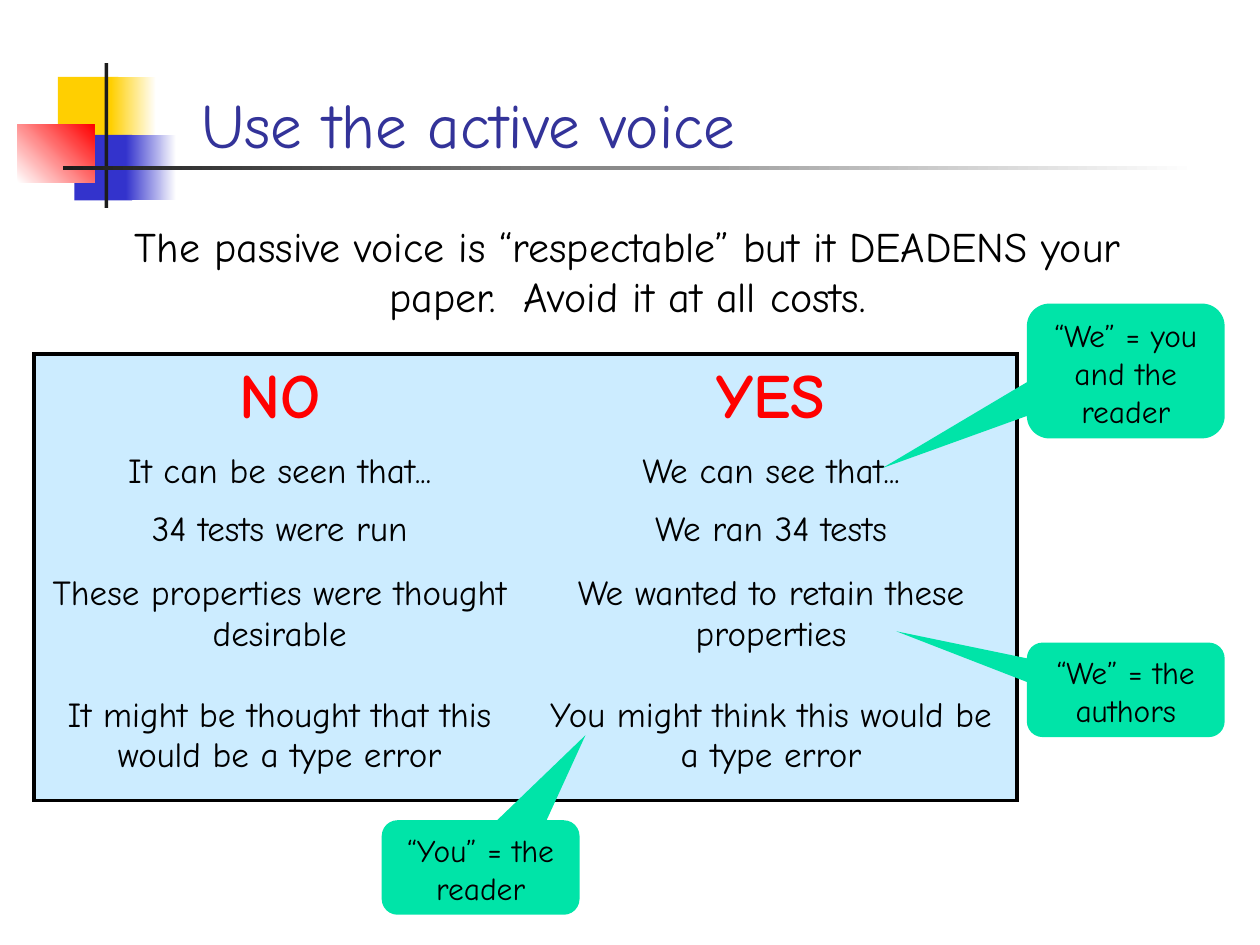
from pptx import Presentation
from pptx.dml.color import RGBColor
from pptx.enum.shapes import MSO_SHAPE
from pptx.enum.text import MSO_ANCHOR, PP_ALIGN
from pptx.oxml.ns import qn
from pptx.util import Inches, Pt
from lxml.etree import SubElement

FONT = "Comic Neue"
BLACK, RED, BLUE, YELLOW = "000000", "FF0000", "3333CC", "FFCF01"
WHITE, CHARCOAL, NAVY = "FFFFFF", "1C1C1C", "333399"
PALE_BLUE, GREEN = "CCECFF", "00E4A8"

# left, top, width, height, gradient colours or one colour, angle
DECORATIONS = [
    (0.46, 0.61, 0.48, 0.52, [YELLOW], 0),
    (0.88, 0.61, 0.36, 0.52, [YELLOW, WHITE], 0),
    (0.59, 1.07, 0.46, 0.52, [BLUE], 0),
    (1.0, 1.07, 0.4, 0.52, [BLUE, WHITE], 0),
    (0.14, 0.99, 0.61, 0.46, [WHITE, RED], 45),
    (0.83, 0.5, 0.03, 1.15, [CHARCOAL], 0),
    (0.5, 1.32, 9, 0.03, [CHARCOAL, WHITE], 0),
]

COMPARISONS = [
    ("NO", "YES", 0.63),
    ("It can be seen that...", "We can see that...", 0.48),
    ("34 tests were run", "We ran 34 tests", 0.39),
    ("These properties were thought desirable",
     "We wanted to retain these properties", 0.91),
    ("It might be thought that this would be a type error",
     "You might think this would be a type error", 1.02),
]

# left, top, height, pointer x and y, text
CALLOUTS = [
    (8.15, 2.41, 1.07, -1.23, 0.72, "“We” = you and the reader"),
    (8.15, 5.1, 0.75, -1.16, -0.62, "“We” = the authors"),
    (3.03, 6.51, 0.75, 0.53, -1.4, "“You” = the reader"),
]


def rgb(value):
    return RGBColor.from_string(value)


def write(frame, text, size, color=BLACK, bold=False,
          align=PP_ALIGN.CENTER, space_percent=0):
    frame.word_wrap = True
    paragraph = frame.paragraphs[0]
    paragraph.alignment = align
    if space_percent:
        spacing = SubElement(paragraph._p.get_or_add_pPr(), qn("a:spcBef"))
        SubElement(spacing, qn("a:spcPct"), val=str(space_percent * 1000))
    run = paragraph.add_run()
    run.text = text
    run.font.name = FONT
    run.font.size = Pt(size)
    run.font.bold = bold
    run.font.color.rgb = rgb(color)


def add_text(slide, left, top, width, height, text, size,
             anchor=MSO_ANCHOR.TOP, **style):
    box = slide.shapes.add_textbox(
        Inches(left), Inches(top), Inches(width), Inches(height))
    box.text_frame.vertical_anchor = anchor
    write(box.text_frame, text, size, **style)


def add_block(slide, preset, left, top, width, height, colors, angle=0):
    block = slide.shapes.add_shape(
        preset, Inches(left), Inches(top), Inches(width), Inches(height))
    block.shadow.inherit = False
    block.line.fill.background()
    if len(colors) == 1:
        block.fill.solid()
        block.fill.fore_color.rgb = rgb(colors[0])
    else:
        block.fill.gradient()
        block.fill.gradient_angle = angle
        for position, (stop, color) in enumerate(
                zip(block.fill.gradient_stops, colors)):
            stop.position = position
            stop.color.rgb = rgb(color)
    return block


def add_callout(slide, left, top, height, pointer_x, pointer_y, text):
    callout = add_block(slide, MSO_SHAPE.ROUNDED_RECTANGULAR_CALLOUT,
                        left, top, 1.57, height, [GREEN])
    callout.adjustments[0] = pointer_x
    callout.adjustments[1] = pointer_y
    callout.text_frame.vertical_anchor = MSO_ANCHOR.TOP
    write(callout.text_frame, text, 18, space_percent=40)


def set_borders(cell, visible_sides):
    properties = cell._tc.get_or_add_tcPr()
    for side in "LRTB":
        border = SubElement(properties, qn(f"a:ln{side}"), w=str(Pt(2.25)))
        if side in visible_sides:
            fill = SubElement(border, qn("a:solidFill"))
            SubElement(fill, qn("a:srgbClr"), val=BLACK)
        else:
            SubElement(border, qn("a:noFill"))


def add_comparison_table(slide):
    row_count = len(COMPARISONS)
    table = slide.shapes.add_table(
        row_count, 2, Inches(0.27), Inches(2.81),
        Inches(7.8), Inches(3.55)).table
    table.first_row = table.horz_banding = False
    for row, (*phrases, height) in enumerate(COMPARISONS):
        table.rows[row].height = Inches(height)
        for column, phrase in enumerate(phrases):
            cell = table.cell(row, column)
            # Only the outer edge of the table has a line
            sides = "LR"[column]
            if row == 0:
                sides += "T"
            if row == row_count - 1:
                sides += "B"
            set_borders(cell, sides)
            cell.fill.solid()
            cell.fill.fore_color.rgb = rgb(PALE_BLUE)
            cell.vertical_anchor = MSO_ANCHOR.MIDDLE
            heading = row == 0
            write(cell.text_frame, phrase, 36 if heading else 20,
                  RED if heading else BLACK, bold=heading, space_percent=20)


def main():
    presentation = Presentation()
    presentation.slide_width = Inches(10)
    presentation.slide_height = Inches(7.5)
    slide = presentation.slides.add_slide(presentation.slide_layouts[6])

    # Corner decoration and rule under the title
    for left, top, width, height, colors, angle in DECORATIONS:
        add_block(slide, MSO_SHAPE.RECTANGLE, left, top, width, height,
                  colors, angle)

    # Title
    add_text(slide, 1.5, 0.08, 8.52, 1.25, "Use the active voice", 36,
             anchor=MSO_ANCHOR.BOTTOM, color=NAVY, align=PP_ALIGN.LEFT)

    # Passive and active phrases
    add_comparison_table(slide)

    # Advice
    add_text(slide, 0.59, 1.7, 8.78, 0.9,
             "The passive voice is “respectable” but it DEADENS your paper.  "
             "Avoid it at all costs.", 24, space_percent=40)

    # Who the pronouns stand for
    for callout in CALLOUTS:
        add_callout(slide, *callout)

    presentation.save("out.pptx")


if __name__ == "__main__":
    main()
